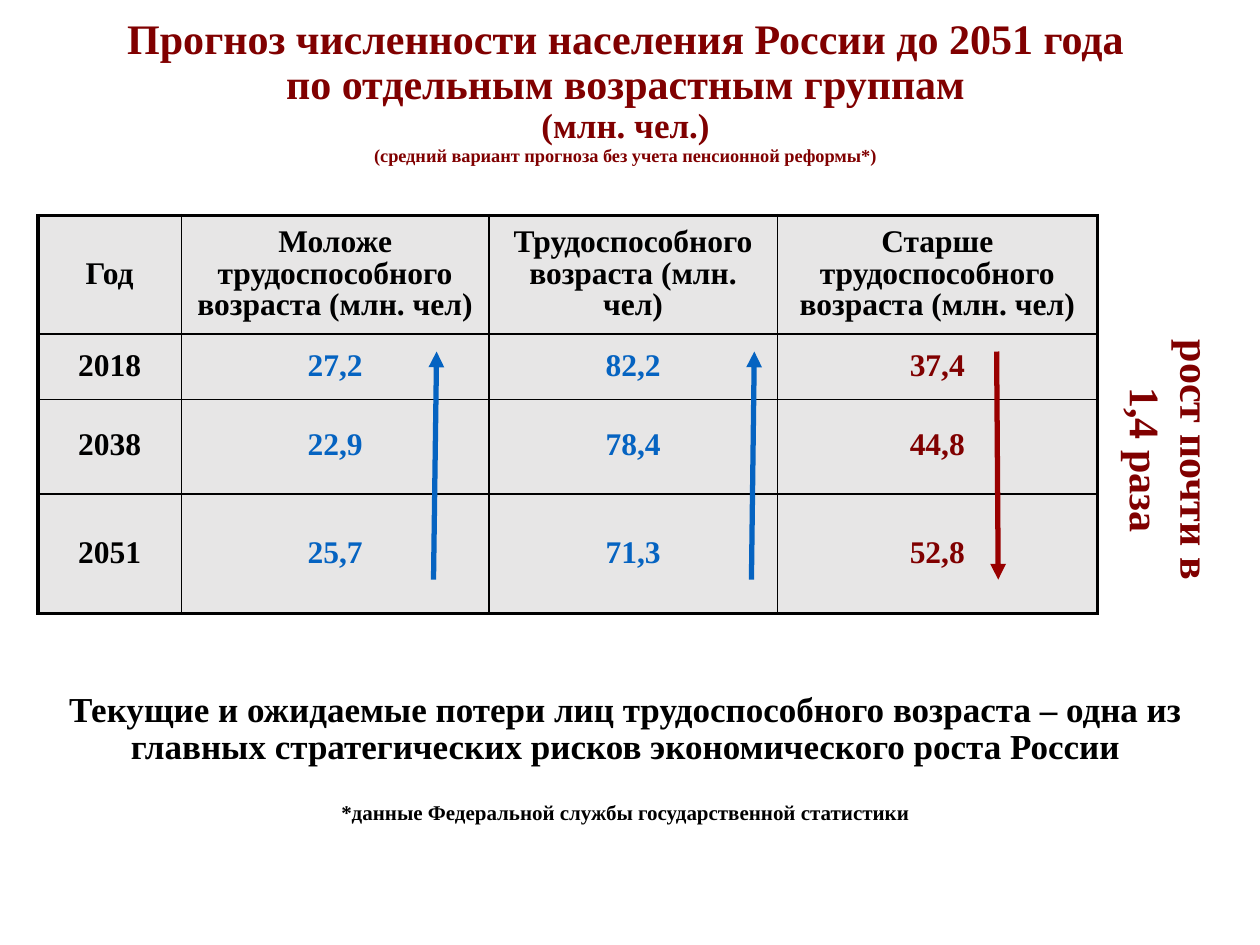
from lxml.etree import SubElement
from pptx import Presentation
from pptx.dml.color import RGBColor
from pptx.enum.shapes import MSO_CONNECTOR
from pptx.enum.text import MSO_ANCHOR, MSO_AUTO_SIZE, PP_ALIGN
from pptx.oxml.ns import qn
from pptx.util import Inches, Pt

MAROON = RGBColor(0x80, 0x00, 0x00)
RED = RGBColor(0x99, 0x00, 0x00)
BLUE = RGBColor(0x05, 0x63, 0xC1)
BLACK = RGBColor(0x00, 0x00, 0x00)
GREY = RGBColor(0xE7, 0xE6, 0xE6)


def add_text(p, text, size=18, color=BLACK, before=0, spacing=0.9):
    p.alignment = PP_ALIGN.CENTER
    p.line_spacing = spacing
    p.space_before = Pt(before)
    r = p.add_run()
    r.text = text
    r.font.name = "Times New Roman"
    r.font.size = Pt(size)
    r.font.bold = True
    r.font.color.rgb = color


def place(sp, left, top, width, height):
    """Position a shape and fix its text frame; return the frame."""
    sp.left, sp.top, sp.width, sp.height = map(Inches, (left, top, width, height))
    tf = sp.text_frame
    tf.word_wrap = True
    tf.auto_size = MSO_AUTO_SIZE.NONE
    return tf


prs = Presentation()
prs.slide_width, prs.slide_height = Inches(10), Inches(7.5)
s = prs.slides.add_slide(prs.slide_layouts[1])

# Title
tf = place(s.shapes.title, 0.08, 0.08, 9.77, 1.45)
tf.vertical_anchor = MSO_ANCHOR.MIDDLE
tf.margin_bottom = Inches(0.2)
title_lines = [
    ("Прогноз численности населения России до 2051 года", 24),
    ("по отдельным возрастным группам", 24),
    ("(млн. чел.)", 20),
    ("(средний вариант прогноза без учета пенсионной реформы*)", 10.5),
]
for i, (line, size) in enumerate(title_lines):
    p = tf.add_paragraph() if i else tf.paragraphs[0]
    add_text(p, line, size, MAROON)

# Conclusion and footnote
tf = place(s.placeholders[1], 0.08, 5.39, 9.77, 1.3)
tf.vertical_anchor = MSO_ANCHOR.TOP
tf.margin_top = Inches(0.1)
notes = [
    ("Текущие и ожидаемые потери лиц трудоспособного возраста – одна из "
     "главных стратегических рисков экономического роста России", 20, 0),
    ("*данные Федеральной службы государственной статистики", 12, 20),
]
for i, (line, size, before) in enumerate(notes):
    p = tf.add_paragraph() if i else tf.paragraphs[0]
    pPr = p._p.get_or_add_pPr()
    pPr.set("marL", "0")
    pPr.set("indent", "0")
    SubElement(pPr, qn("a:buNone"))
    add_text(p, line, size, before=before)

# Table
LEFT, TOP = 0.3, 1.71
COLS = [1.14, 2.44, 2.29, 2.54]
ROWS = [0.94, 0.52, 0.75, 0.95]
data = [
    ["Год", "Моложе трудоспособного возраста (млн. чел)",
     "Трудоспособного возраста (млн. чел)",
     "Старше трудоспособного возраста (млн. чел)"],
    ["2018", "27,2", "82,2", "37,4"],
    ["2038", "22,9", "78,4", "44,8"],
    ["2051", "25,7", "71,3", "52,8"],
]
value_colors = [BLACK, BLUE, BLUE, MAROON]
table = s.shapes.add_table(len(ROWS), len(COLS), Inches(LEFT), Inches(TOP),
                           Inches(sum(COLS)), Inches(sum(ROWS))).table
for col, width in zip(table.columns, COLS):
    col.width = Inches(width)
for row, height in zip(table.rows, ROWS):
    row.height = Inches(height)

for i, values in enumerate(data):
    for j, value in enumerate(values):
        cell = table.cell(i, j)
        cell.vertical_anchor = MSO_ANCHOR.MIDDLE
        cell.margin_left = cell.margin_right = Inches(0.07)
        cell.margin_top = cell.margin_bottom = Inches(0.04)
        outer = {"L": j == 0, "R": j == len(COLS) - 1,
                 "T": i == 0, "B": i == len(ROWS) - 1}
        tcPr = cell._tc.get_or_add_tcPr()
        for side, is_outer in outer.items():
            ln = SubElement(tcPr, qn(f"a:ln{side}"), w=str(Pt(2.25 if is_outer else 1)))
            SubElement(SubElement(ln, qn("a:solidFill")), qn("a:srgbClr"), val=str(BLACK))
        cell.fill.solid()
        cell.fill.fore_color.rgb = GREY
        add_text(cell.text_frame.paragraphs[0], value,
                 color=value_colors[j] if i else BLACK)

# Trend arrows: column, share of its width at the start and end, direction, colour
high = TOP + ROWS[0] + 0.14
low = TOP + sum(ROWS) - 0.27
arrows = [
    (1, 0.82, 0.83, low, high, BLUE),
    (2, 0.91, 0.92, low, high, BLUE),
    (3, 0.685, 0.69, high, low, RED),
]
for col, start, end, y1, y2, color in arrows:
    x = LEFT + sum(COLS[:col])
    arrow = s.shapes.add_connector(
        MSO_CONNECTOR.STRAIGHT, Inches(x + start * COLS[col]), Inches(y1),
        Inches(x + end * COLS[col]), Inches(y2))
    arrow.line.color.rgb = color
    arrow.line.width = Pt(3)
    SubElement(arrow.line._get_or_add_ln(), qn("a:tailEnd"), type="triangle")
    SubElement(arrow.element.spPr, qn("a:effectLst"))

# Vertical remark beside the table
box = s.shapes.add_textbox(0, 0, 0, 0)
tf = place(box, 8.74, 2.43, 1.01, 2.44)
box.element.txBody.bodyPr.set("vert", "vert")
add_text(tf.paragraphs[0], "рост почти в 1,4 раза", 24, MAROON, spacing=1.0)

prs.save("out.pptx")
